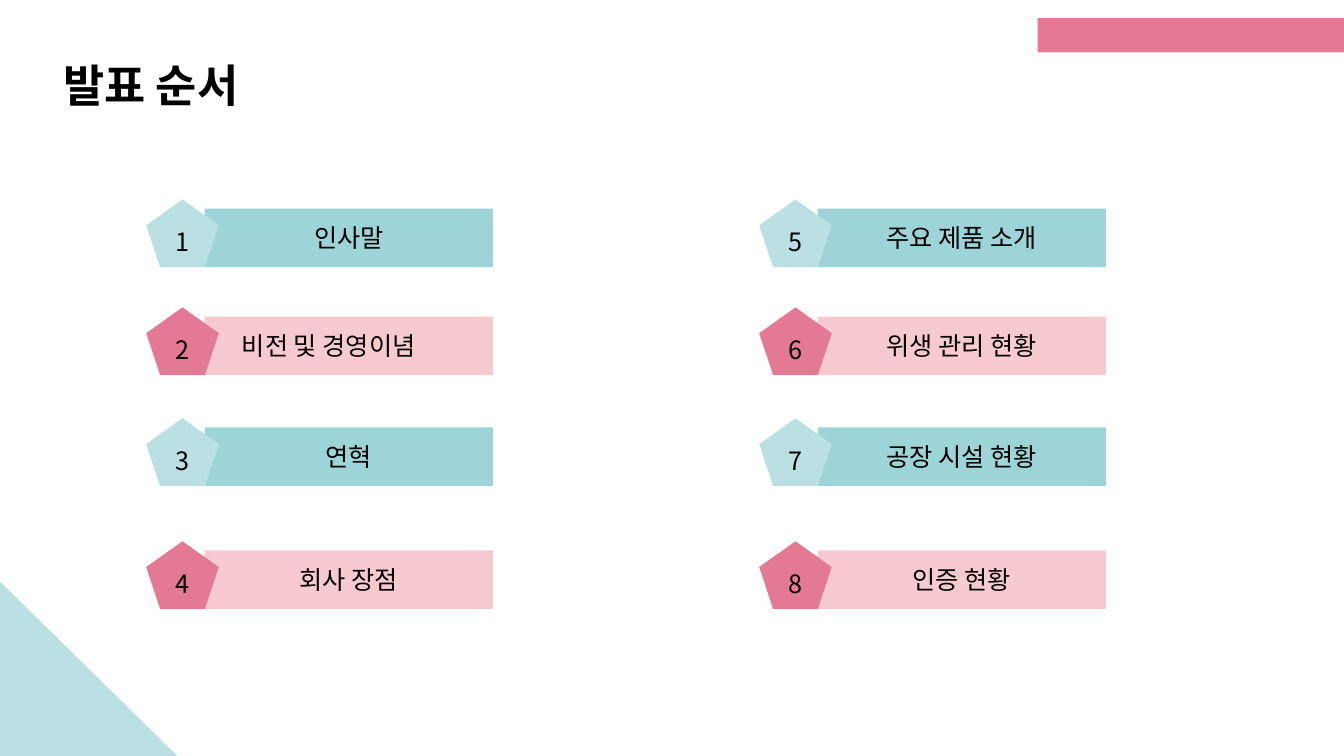
import dataclasses

import lxml.etree
import pptx
import pptx.dml.color
import pptx.enum.shapes
import pptx.enum.text
import pptx.oxml.ns
import pptx.util

Inches = pptx.util.Inches
Shape = pptx.enum.shapes.MSO_SHAPE
Align = pptx.enum.text.PP_ALIGN
Anchor = pptx.enum.text.MSO_ANCHOR


@dataclasses.dataclass(frozen=True)
class Theme:
    font: str = "Noto Sans CJK KR"
    ink: str = "000000"
    teal: str = "9DD4D7"
    light_teal: str = "BAE0E3"
    rose: str = "E37992"
    light_rose: str = "F7CACF"
    title_size: int = 32
    body_size: int = 18


def rgb(value):
    return pptx.dml.color.RGBColor.from_string(value)


def write(tf, text, *, font, size, color, bold=False, align=Align.LEFT):
    p = tf.paragraphs[0]
    p.alignment = align
    r = p.add_run()
    r.text = text
    r.font.name = font
    r.font.size = pptx.util.Pt(size)
    r.font.bold = bold
    r.font.color.rgb = rgb(color)
    ea = lxml.etree.SubElement(r.font._element, pptx.oxml.ns.qn("a:ea"))
    ea.set("typeface", font)


class Deck:
    """Draws the elements of one slide in a shared style."""

    def __init__(self, prs, theme):
        self.theme = theme
        self.s = prs.slides.add_slide(prs.slide_layouts[6])

    def shape(self, kind, box, fill, shapes=None):
        parent = self.s.shapes if shapes is None else shapes
        sp = parent.add_shape(kind, *map(Inches, box))
        sp.shadow.inherit = False
        sp.fill.solid()
        sp.fill.fore_color.rgb = rgb(fill)
        sp.line.fill.background()
        return sp

    def label(self, sp, text, align=Align.CENTER, indent=0.1):
        tf = sp.text_frame
        tf.word_wrap = True
        tf.vertical_anchor = Anchor.MIDDLE
        tf.margin_left = Inches(indent)
        write(tf, text, font=self.theme.font, size=self.theme.body_size,
              color=self.theme.ink, align=align)

    def title(self, text, box):
        tf = self.s.shapes.add_textbox(*map(Inches, box)).text_frame
        tf.word_wrap = False
        tf.auto_size = pptx.enum.text.MSO_AUTO_SIZE.SHAPE_TO_FIT_TEXT
        write(tf, text, font=self.theme.font, size=self.theme.title_size,
              color=self.theme.ink, bold=True)

    def agenda_item(self, number, text, left, top, colors, **format):
        bar_color, badge_color = colors
        shapes = self.s.shapes.add_group_shape().shapes
        bar = self.shape(Shape.RECTANGLE, (left + 0.58, top + 0.09, 2.86, 0.58),
                         bar_color, shapes)
        self.label(bar, text, **format)
        badge = self.shape(Shape.REGULAR_PENTAGON, (left, top, 0.72, 0.67),
                           badge_color, shapes)
        self.label(badge, str(number))


def main():
    prs = pptx.Presentation()
    prs.slide_width, prs.slide_height = Inches(13.33), Inches(7.5)
    theme = Theme()
    deck = Deck(prs, theme)

    deck.shape(Shape.RIGHT_TRIANGLE, (0, 5.77, 1.76, 1.73), theme.light_teal)
    deck.shape(Shape.RECTANGLE, (10.29, 0.18, 3.05, 0.34), theme.rose)
    deck.title("발표 순서", (0.53, 0.52, 2.15, 0.64))

    topics = ["인사말", "비전 및 경영이념", "연혁", "회사 장점",
              "주요 제품 소개", "위생 관리 현황", "공장 시설 현황", "인증 현황"]
    columns = [1.45, 7.53]
    rows = [1.98, 3.05, 4.15, 5.37]
    palettes = [(theme.teal, theme.light_teal), (theme.light_rose, theme.rose)]
    formats = {2: {"align": Align.LEFT, "indent": 0.37}}
    for i, topic in enumerate(topics):
        column, row = divmod(i, len(rows))
        deck.agenda_item(i + 1, topic, columns[column], rows[row],
                         palettes[row % 2], **formats.get(i + 1, {}))

    prs.save("out.pptx")


if __name__ == "__main__":
    main()
